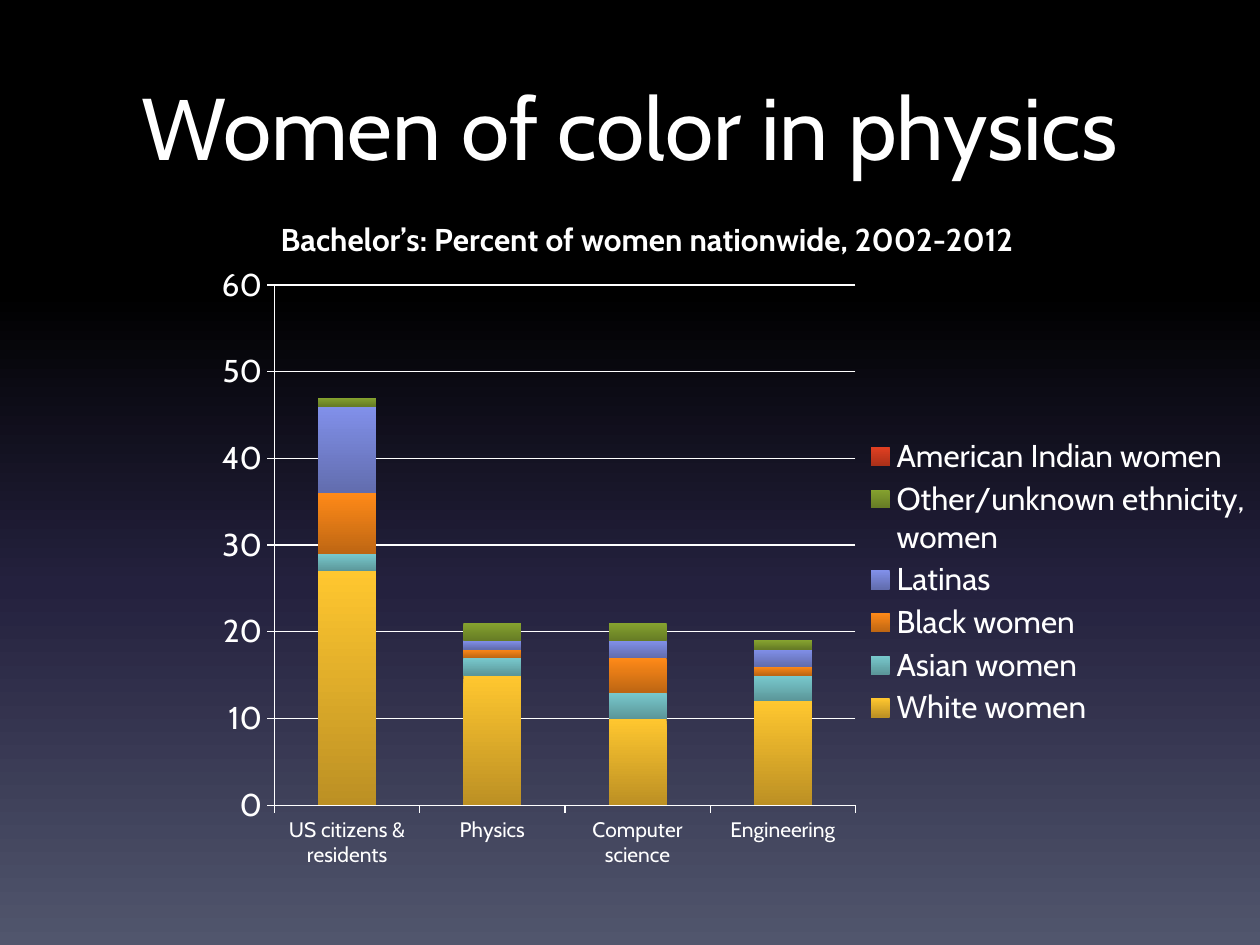
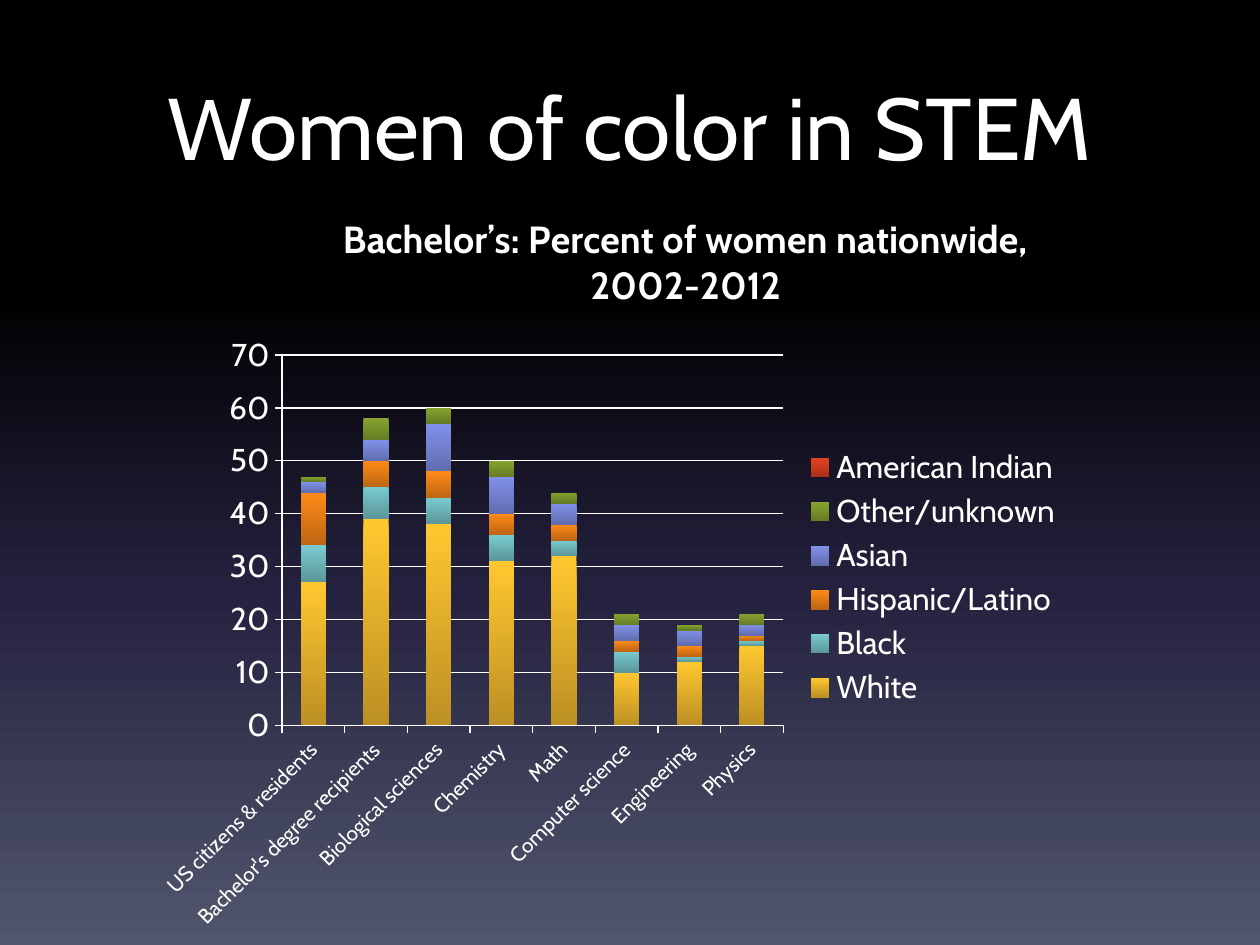
import copy
import pptx
import pptx.chart.data
import pptx.dml.color
import pptx.enum.chart
import pptx.enum.text
import pptx.oxml
import pptx.oxml.ns
import pptx.util

Cm, Pt, qn = pptx.util.Cm, pptx.util.Pt, pptx.oxml.ns.qn
RGB = pptx.dml.color.RGBColor.from_string
FONT = "Cabin"
COLORS = {
    "text": "FFFFFF",
    "black": "000000",
    "indigo": "24213E",
    "slate": "51566D",
    "yellow": ("FFC72F", "BC9024"),
    "teal": ("79CACE", "5B9699"),
    "orange": ("FF8A18", "BE6613"),
    "periwinkle": ("8190EA", "626DAE"),
    "green": ("86A32F", "667C25"),
    "red": ("E24022", "AA3019"),
}
BACKGROUND = [(0, "black"), (0.31, "black"), (0.62, "indigo"), (1, "slate")]
SERIES_COLORS = ["yellow", "teal", "orange", "periwinkle", "green", "red"]
CHART_TITLE = "Bachelor’s: Percent of women nationwide, 2002-2012"
NS = pptx.oxml.ns.nsdecls("c", "a")

SLIDES = [
    {
        "title": "Women of color in physics",
        "box": (0.69, 3.81, 24.71, 15.85),
        "title_size": 18,
        "title_at": None,
        "plot_at": (0.196, 0.122, 0.474, 0.662),
        "legend_at": (0.67, 0.31, 0.33, 0.38),
        "max": 60,
        "label_angle": 0,
        "categories": ["US citizens & residents", "Physics", "Computer science", "Engineering"],
        "series": {
            "White women": (27, 15, 10, 12),
            "Asian women": (2, 2, 3, 3),
            "Black women": (7, 1, 4, 1),
            "Latinas": (10, 1, 2, 2),
            "Other/unknown ethnicity, women": (1, 2, 2, 1),
            "American Indian women": (0, 0, 0, 0),
        },
    },
    {
        "title": "Women of color in STEM",
        "box": (2.9, 3.94, 18.82, 15.11),
        "title_size": 21.6,
        "title_at": (0.206, 0.013),
        "plot_at": (0.148, 0.213, 0.537, 0.494),
        "legend_at": (0.7, 0.33, 0.29, 0.36),
        "max": 70,
        "label_angle": -45,
        "categories": ["US citizens & residents", "Bachelor's degree recipients",
                       "Biological sciences", "Chemistry", "Math",
                       "Computer science", "Engineering", "Physics"],
        "series": {
            "White": (27, 39, 38, 31, 32, 10, 12, 15),
            "Black": (7, 6, 5, 5, 3, 4, 1, 1),
            "Hispanic/Latino": (10, 5, 5, 4, 3, 2, 2, 1),
            "Asian": (2, 4, 9, 7, 4, 3, 3, 2),
            "Other/unknown": (1, 4, 3, 3, 2, 2, 1, 2),
            "American Indian": (0, 0, 0, 0, 0, 0, 0, 0),
        },
    },
]


def style_font(font, size, bold=False):
    font.name = FONT
    font.size = Pt(size)
    font.bold = bold
    font.color.rgb = RGB(COLORS["text"])


def place(element, index, position, inner=False):
    for old in element.findall(qn("c:layout")):
        element.remove(old)
    target = '<c:layoutTarget val="inner"/>' if inner else ""
    modes = "".join(f'<c:{k}Mode val="edge"/>' for k in "xy")
    sizes = "".join(f'<c:{k} val="{v}"/>' for k, v in zip("xywh", position))
    element.insert(index, pptx.oxml.parse_xml(
        f"<c:layout {NS}><c:manualLayout>{target}{modes}{sizes}</c:manualLayout></c:layout>"))


prs = pptx.Presentation()
prs.slide_width, prs.slide_height = Cm(25.4), Cm(19.05)

for page in SLIDES:
    s = prs.slides.add_slide(prs.slide_layouts[6])

    fill = s.background.fill
    fill.gradient()
    fill.gradient_angle = 270
    stops = next(s.element.iter(qn("a:gsLst")))
    while len(stops) < len(BACKGROUND):
        stops.append(copy.deepcopy(stops[0]))
    for stop, (position, color) in zip(fill.gradient_stops, BACKGROUND):
        stop.position = position
        stop.color.rgb = RGB(COLORS[color])

    tf = s.shapes.add_textbox(Cm(1.27), Cm(0.95), Cm(22.86), Cm(3.18)).text_frame
    tf.word_wrap = True
    tf.vertical_anchor = pptx.enum.text.MSO_ANCHOR.MIDDLE
    p = tf.paragraphs[0]
    p.alignment = pptx.enum.text.PP_ALIGN.CENTER
    r = p.add_run()
    r.text = page["title"]
    style_font(r.font, 50)

    data = pptx.chart.data.CategoryChartData(number_format="0")
    data.categories = page["categories"]
    for name, values in page["series"].items():
        data.add_series(name, values)
    chart = s.shapes.add_chart(
        pptx.enum.chart.XL_CHART_TYPE.COLUMN_STACKED,
        *[Cm(v) for v in page["box"]], data).chart
    style_font(chart.font, 18)
    chart.element.find(qn("c:txPr")).addprevious(pptx.oxml.parse_xml(
        f"<c:spPr {NS}><a:noFill/><a:ln><a:noFill/></a:ln></c:spPr>"))

    chart.has_title = True
    p = chart.chart_title.text_frame.paragraphs[0]
    r = p.add_run()
    r.text = CHART_TITLE
    style_font(r.font, page["title_size"], True)
    if page["title_at"]:
        place(next(chart.element.iter(qn("c:title"))), 1, page["title_at"])

    chart.has_legend = True
    chart.legend.position = pptx.enum.chart.XL_LEGEND_POSITION.RIGHT
    chart.legend.include_in_layout = False
    style_font(chart.legend.font, 18)
    place(next(chart.element.iter(qn("c:legend"))), 1, page["legend_at"])
    place(next(chart.element.iter(qn("c:plotArea"))), 0, page["plot_at"], True)

    plot = chart.plots[0]
    plot.gap_width = 150
    plot.overlap = 100
    plot.vary_by_categories = False
    for series, color in zip(plot.series, SERIES_COLORS):
        fill = series.format.fill
        fill.gradient()
        fill.gradient_angle = 270
        for stop, shade in zip(fill.gradient_stops, COLORS[color]):
            stop.color.rgb = RGB(shade)

    value_axis, category_axis = chart.value_axis, chart.category_axis
    value_axis.minimum_scale = 0
    value_axis.maximum_scale = page["max"]
    value_axis.major_unit = 10
    value_axis.has_major_gridlines = True
    value_axis.tick_labels.number_format = "0"
    value_axis.tick_labels.number_format_is_linked = False
    for axis, size in ((value_axis, 18), (category_axis, 12)):
        axis.major_tick_mark = pptx.enum.chart.XL_TICK_MARK.OUTSIDE
        style_font(axis.tick_labels.font, size)
    for lines in (value_axis, category_axis, value_axis.major_gridlines):
        lines.format.line.color.rgb = RGB(COLORS["text"])
        lines.format.line.width = Pt(0.75)
    body = next(next(chart.element.iter(qn("c:catAx"))).iter(qn("a:bodyPr")))
    body.set("rot", str(page["label_angle"] * 60000))

prs.save("out.pptx")
